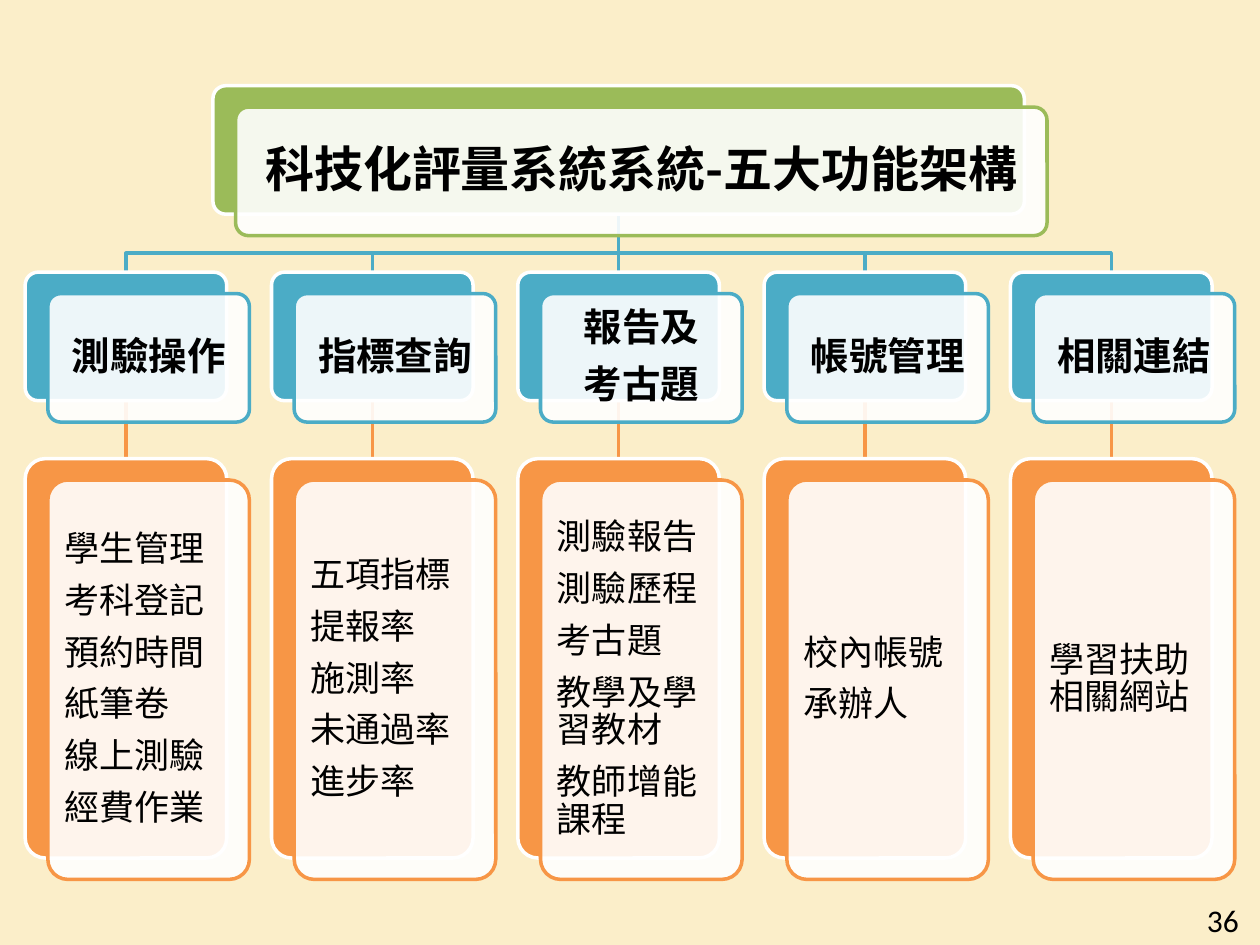
"""Build a slide with a five-branch hierarchy of layered cards."""
from dataclasses import dataclass

from lxml.etree import SubElement
from pptx import Presentation
from pptx.dml.color import RGBColor
from pptx.enum.shapes import MSO_CONNECTOR, MSO_SHAPE
from pptx.enum.text import MSO_ANCHOR, PP_ALIGN
from pptx.oxml.ns import qn
from pptx.util import Inches, Pt

COLORS = {
    "background": "FBEEC9",
    "title": "9BBB59",
    "group": "4BACC6",
    "detail": "F79646",
    "white": "FFFFFF",
    "black": "000000",
}
FONT = "Noto Sans CJK SC"
LEFT, PITCH, CARD_WIDTH = 0.2, 1.955, 1.6
OFFSET_X, OFFSET_Y = 0.18, 0.17
CORNER = 0.1
CORNER_INSET = 0.29
BUS_Y = 2.01


@dataclass(frozen=True)
class Level:
    color: str
    top: float
    width: float
    height: float
    size: int
    inset: float
    after: int
    bold: bool
    align: PP_ALIGN


@dataclass(frozen=True)
class Branch:
    heading: tuple[str, ...]
    items: tuple[str, ...]


TITLE = Level("title", 0.68, 6.44, 1.02, 28, 0.15, 12, True, PP_ALIGN.CENTER)
GROUP = Level("group", 2.16, CARD_WIDTH, 1.02, 22, 0.12, 9, True, PP_ALIGN.CENTER)
DETAIL = Level("detail", 3.64, CARD_WIDTH, 3.17, 20, 0.13, 8, False, PP_ALIGN.LEFT)

BRANCHES = (
    Branch(("測驗操作",),
           ("學生管理", "考科登記", "預約時間", "紙筆卷", "線上測驗", "經費作業")),
    Branch(("指標查詢",), ("五項指標", "提報率", "施測率", "未通過率", "進步率")),
    Branch(("報告及", "考古題"),
           ("測驗報告", "測驗歷程", "考古題", "教學及學習教材", "教師增能課程")),
    Branch(("帳號管理",), ("校內帳號", "承辦人")),
    Branch(("相關連結",), ("學習扶助相關網站",)),
)


def rgb(name: str) -> RGBColor:
    return RGBColor.from_string(COLORS[name])


def column_center(col: int) -> float:
    return LEFT + col * PITCH + CARD_WIDTH / 2


def style_line(sp, color: str) -> None:
    sp.line.color.rgb = rgb(color)
    sp.line.width = Pt(2)


def add_run(p, text: str, size: int, font: str, bold: bool = False) -> None:
    r = p.add_run()
    r.text = text
    r.font.size, r.font.bold, r.font.name = Pt(size), bold, font
    r.font.color.rgb = rgb("black")
    SubElement(r.font._element, qn("a:ea"), typeface=font)


def add_panel(shapes, level: Level, x: float, y: float, fill: str, line: str):
    sp = shapes.add_shape(MSO_SHAPE.ROUNDED_RECTANGLE, Inches(x), Inches(y),
                          Inches(level.width), Inches(level.height))
    sp.adjustments[0] = CORNER
    sp.shadow.inherit = False
    sp.fill.solid()
    sp.fill.fore_color.rgb = rgb(fill)
    style_line(sp, line)
    return sp


def add_card(shapes, level: Level, center: float, lines: tuple[str, ...]):
    x = center - level.width / 2
    back = add_panel(shapes, level, x, level.top, level.color, "white")
    front = add_panel(shapes, level, x + OFFSET_X, level.top + OFFSET_Y,
                      "white", level.color)
    clr = front._element.spPr.find(qn("a:solidFill")).find(qn("a:srgbClr"))
    SubElement(clr, qn("a:alpha"), val="90000")

    tf = front.text_frame
    tf.word_wrap = True
    tf.vertical_anchor = MSO_ANCHOR.MIDDLE
    radius = CORNER * min(level.width, level.height)
    inset = Inches(level.inset - CORNER_INSET * radius)
    tf.margin_left = tf.margin_right = tf.margin_top = tf.margin_bottom = inset
    for i, line in enumerate(lines):
        p = tf.add_paragraph() if i else tf.paragraphs[0]
        p.alignment = level.align
        p.line_spacing = 0.9
        p.space_after = Pt(level.after)
        add_run(p, line, level.size, FONT, level.bold)
    return back


def add_link(shapes, x: float, upper: Level, lower: Level):
    cxn = shapes.add_connector(MSO_CONNECTOR.STRAIGHT,
                               Inches(x), Inches(upper.top + upper.height),
                               Inches(x), Inches(lower.top))
    style_line(cxn, lower.color)
    SubElement(cxn._element.spPr, qn("a:effectLst"))
    return cxn


def join(cxn, upper, lower) -> None:
    cxn.begin_connect(upper, 2)
    cxn.end_connect(lower, 0)


def add_bracket(shapes, root_x: float, x: float) -> None:
    fb = shapes.build_freeform(Inches(root_x), Inches(TITLE.top + TITLE.height))
    points = ((root_x, BUS_Y), (x, BUS_Y), (x, GROUP.top))
    fb.add_line_segments([(Inches(px), Inches(py)) for px, py in points], close=False)
    sp = fb.convert_to_shape()
    sp.fill.background()
    sp.shadow.inherit = False
    style_line(sp, GROUP.color)


def add_page_number(shapes, number: str) -> None:
    tf = shapes.add_textbox(Inches(7.6), Inches(7.1), Inches(2.33), Inches(0.4)).text_frame
    tf.word_wrap = True
    tf.vertical_anchor = MSO_ANCHOR.MIDDLE
    p = tf.paragraphs[0]
    p.alignment = PP_ALIGN.RIGHT
    add_run(p, number, 18, "Calibri")


def main() -> None:
    prs = Presentation()
    prs.slide_width, prs.slide_height = Inches(10), Inches(7.5)
    s = prs.slides.add_slide(prs.slide_layouts[6])
    s.background.fill.solid()
    s.background.fill.fore_color.rgb = rgb("background")

    middle = len(BRANCHES) // 2
    root_x = column_center(middle)
    centers = [column_center(col) for col in range(len(BRANCHES))]
    for col, x in enumerate(centers):
        if col != middle:
            add_bracket(s.shapes, root_x, x)
    stem = add_link(s.shapes, root_x, TITLE, GROUP)
    links = [add_link(s.shapes, x, GROUP, DETAIL) for x in centers]

    root = add_card(s.shapes, TITLE, root_x, ("科技化評量系統系統-五大功能架構",))
    for col, (branch, x, link) in enumerate(zip(BRANCHES, centers, links)):
        group = add_card(s.shapes, GROUP, x, branch.heading)
        detail = add_card(s.shapes, DETAIL, x, branch.items)
        join(link, group, detail)
        if col == middle:
            join(stem, root, group)

    add_page_number(s.shapes, "36")
    prs.save("out.pptx")


if __name__ == "__main__":
    main()
